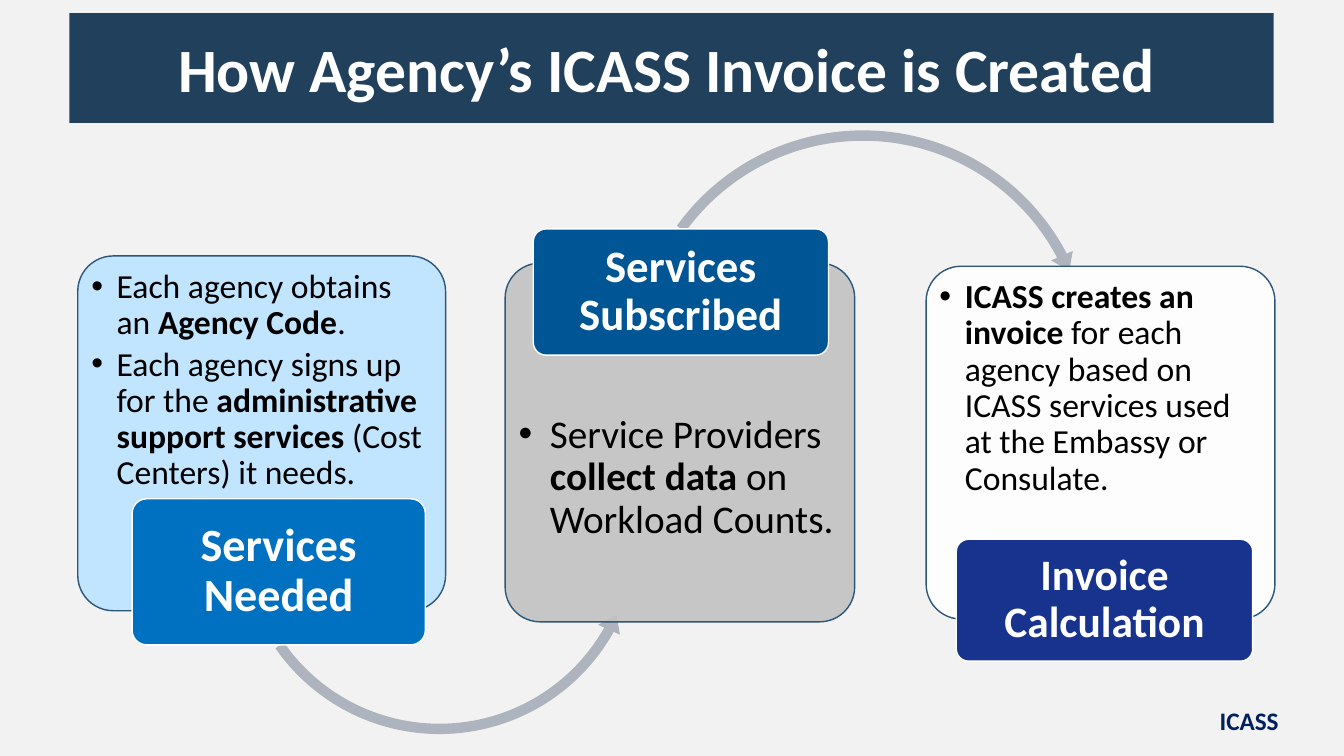
from lxml import etree
from pptx import Presentation
from pptx.dml.color import RGBColor
from pptx.enum.shapes import MSO_SHAPE as SHAPE
from pptx.enum.text import MSO_ANCHOR as ANCHOR, PP_ALIGN as ALIGN
from pptx.oxml.ns import qn
from pptx.util import Cm, Pt

COLORS = {
    "background": "F2F2F2", "banner": "21405C", "outline": "2C567A",
    "arrow": "ADB4BE", "white": "FFFFFF", "black": "000000",
    "sky": "C1E4FF", "gray": "C2C2C2", "blue": "0070C0",
    "ocean": "005695", "navy": "17338D", "badge": "002060",
}

STEPS = [
    {
        "card": (1.96, 6.45, 9.27, 8.94), "fill": "sky", "alpha": 100,
        "top": 0.08, "size": 24, "indent": 0.64,
        "bullets": [
            [("Each agency obtains an ", False), ("Agency Code", True), (".", False)],
            [("Each agency signs up for the ", False),
             ("administrative support services", True),
             (" (Cost Centers) it needs.", False)],
        ],
        "arrow": (SHAPE.LEFT_CIRCULAR_ARROW, 5.87, 8.26, 10.41,
                  (0.025, 2.988, 17.619, 87.121, 0.029)),
        "label": (3.33, 12.57, 7.39, 3.68), "label_fill": "blue",
        "title": "Services Needed", "title_size": 33,
    },
    {
        "card": (12.73, 6.63, 8.81, 9.04), "fill": "gray", "alpha": 90,
        "top": 3.56, "size": 28, "indent": 0.79,
        "bullets": [
            [("Service Providers ", False), ("collect data ", True),
             ("on Workload Counts.", False)],
        ],
        "arrow": (SHAPE.CIRCULAR_ARROW, 15.8, 3.12, 11.91,
                  (0.022, 2.591, 199.373, 129.475, 0.025)),
        "label": (13.44, 5.77, 7.44, 3.18), "label_fill": "ocean",
        "title": "Services Subscribed", "title_size": 32,
    },
    {
        "card": (23.34, 6.71, 8.79, 8.89), "fill": "white", "alpha": 90,
        "top": 0.08, "size": 24, "indent": 0.64,
        "bullets": [
            [("ICASS creates an invoice", True),
             (" for each agency based on ICASS services used at the Embassy or Consulate.",
              False)],
        ],
        "arrow": None,
        "label": (24.1, 13.59, 7.47, 3.07), "label_fill": "navy",
        "title": "Invoice Calculation", "title_size": 31,
    },
]


def add_box(kind, box, fill, line=None, inset=(0.1, 0.1), anchor=ANCHOR.MIDDLE):
    sp = slide.shapes.add_shape(kind, *[Cm(v) for v in box])
    sp.shadow.inherit = False
    sp.fill.solid()
    sp.fill.fore_color.rgb = RGBColor.from_string(COLORS[fill])
    if line:
        sp.line.color.rgb = RGBColor.from_string(COLORS[line])
        sp.line.width = Pt(1)
    else:
        sp.line.fill.background()
    if kind == SHAPE.ROUNDED_RECTANGLE:
        sp.adjustments[0] = 0.1
    tf = sp.text_frame
    tf.word_wrap = True
    tf.vertical_anchor = anchor
    tf.margin_left = tf.margin_right = Cm(inset[0])
    tf.margin_top = tf.margin_bottom = Cm(inset[1])
    return sp


def add_run(p, text, size, color, bold=True):
    r = p.add_run()
    r.text = text
    r.font.name = "Calibri"
    r.font.size = Pt(size)
    r.font.bold = bold
    r.font.color.rgb = RGBColor.from_string(COLORS[color])


prs = Presentation()
prs.slide_width, prs.slide_height = Cm(33.87), Cm(19.05)
slide = prs.slides.add_slide(prs.slide_layouts[6])
slide.background.fill.solid()
slide.background.fill.fore_color.rgb = RGBColor.from_string(COLORS["background"])

for step in STEPS:
    card = add_box(SHAPE.ROUNDED_RECTANGLE, step["card"], step["fill"], "outline",
                   (0.08, 0.08), ANCHOR.TOP)
    if step["alpha"] < 100:
        color = card.fill._xPr.find(qn("a:solidFill"))[0]
        etree.SubElement(color, qn("a:alpha"), val=str(step["alpha"] * 1000))
    tf = card.text_frame
    tf.margin_top = Cm(step["top"])
    for i, bullet in enumerate(step["bullets"]):
        p = tf.add_paragraph() if i else tf.paragraphs[0]
        p.alignment = ALIGN.LEFT
        p.line_spacing = 0.9
        p.space_after = Pt(3.6)
        pPr = p._p.get_or_add_pPr()
        pPr.set("marL", str(Cm(step["indent"])))
        pPr.set("indent", str(-Cm(step["indent"])))
        etree.SubElement(pPr, qn("a:buFont"), typeface="Arial")
        etree.SubElement(pPr, qn("a:buChar"), char="•")
        for text, bold in bullet:
            add_run(p, text, step["size"], "black", bold)

    if step["arrow"]:
        kind, left, top, side, adjustments = step["arrow"]
        arrow = add_box(kind, (left, top, side, side), "arrow")
        for i, value in enumerate(adjustments):
            arrow.adjustments[i] = value

    label = add_box(SHAPE.ROUNDED_RECTANGLE, step["label"], step["label_fill"], "white",
                    (0.17, 0.11))
    p = label.text_frame.paragraphs[0]
    p.alignment = ALIGN.CENTER
    p.line_spacing = 0.9
    add_run(p, step["title"], step["title_size"], "white")

badge = add_box(SHAPE.RECTANGLE, (29.59, 17.42, 3.78, 1.45), "background")
p = badge.text_frame.paragraphs[0]
p.alignment = ALIGN.CENTER
add_run(p, "ICASS", 18, "badge")

banner = add_box(SHAPE.RECTANGLE, (1.75, 0.33, 30.35, 2.77), "banner")
banner.text_frame.margin_left = Cm(2.74)
p = banner.text_frame.paragraphs[0]
p.alignment = ALIGN.LEFT
add_run(p, "How Agency’s ICASS Invoice is Created", 44, "white")

prs.save("out.pptx")
